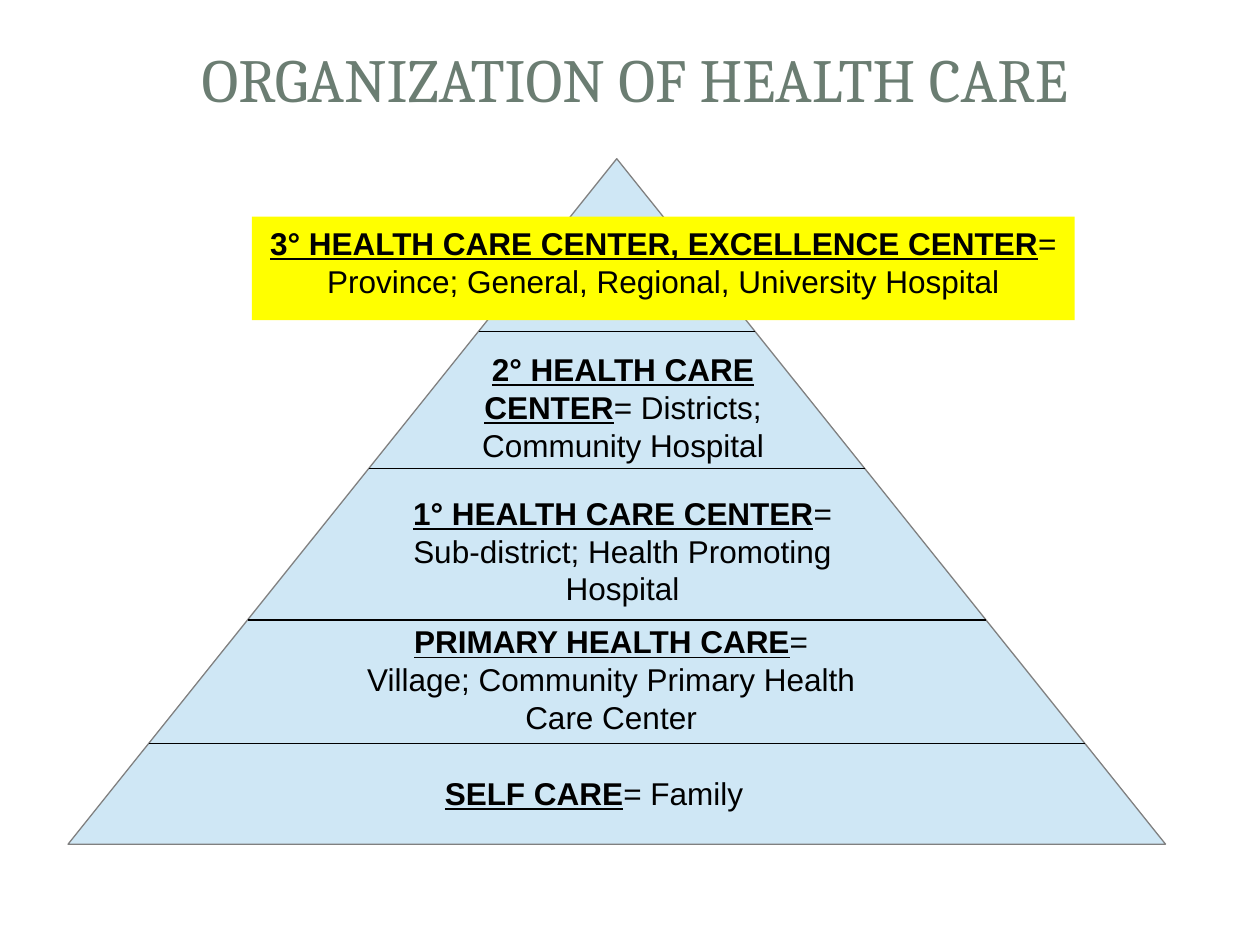
from lxml.etree import SubElement
from pptx import Presentation
from pptx.dml.color import RGBColor
from pptx.enum.shapes import MSO_CONNECTOR, MSO_SHAPE
from pptx.enum.text import MSO_ANCHOR, PP_ALIGN
from pptx.oxml.ns import qn
from pptx.util import Emu, Pt

SCALE = 9144  # EMU per px, 100 px to the inch

TITLE_BOX = (54, 0, 900, 125)
PYRAMID_BOX = (54, 126, 871, 544)
DIVIDER_OFFSETS = (137, 246, 366, 464)

# Label box, relative to the pyramid box; heading; description; fill
LEVELS = [
    ((236, 482, 363, 35), "SELF CARE", "= Family", None),
    ((227, 362, 408, 86), "PRIMARY HEALTH CARE",
     "= Village; Community Primary Health Care Center", None),
    ((254, 260, 372, 86), "1° HEALTH CARE CENTER",
     "= Sub-district; Health Promoting Hospital", None),
    ((277, 146, 327, 81), "2° HEALTH CARE CENTER",
     "= Districts; Community Hospital", None),
    ((146, 46, 653, 82), "3° HEALTH CARE CENTER, EXCELLENCE CENTER",
     "= Province; General, Regional, University Hospital", "FFFF00"),
]


def px(*lengths):
    return [Emu(round(length * SCALE)) for length in lengths]


def color(hex_string):
    return RGBColor.from_string(hex_string)


def set_attributes(target, values):
    for name, value in values.items():
        setattr(target, name, value)


def set_frame(text_frame, anchor, margins):
    left, top, right, bottom = px(*margins)
    set_attributes(text_frame, {
        "word_wrap": True, "vertical_anchor": anchor,
        "margin_left": left, "margin_top": top,
        "margin_right": right, "margin_bottom": bottom,
    })


def add_run(paragraph, text, font_color, **font_values):
    run = paragraph.add_run()
    run.text = text
    set_attributes(run.font, font_values)
    run.font.color.rgb = color(font_color)


def add_title(slide, box):
    title = slide.shapes.title
    set_attributes(title, dict(zip(("left", "top", "width", "height"), px(*box))))
    set_frame(title.text_frame, MSO_ANCHOR.MIDDLE, (10, 4, 10, 5))
    paragraph = title.text_frame.paragraphs[0]
    paragraph.alignment = PP_ALIGN.CENTER
    add_run(paragraph, "ORGANIZATION OF HEALTH CARE", "6B7D72",
            name="Cambria", size=Pt(35))


def add_divider(slide, box, offset):
    """Draw a level line from one sloping side of the pyramid to the other."""
    left, top, width, height = box
    center = left + width / 2
    half = width / 2 * offset / height
    divider = slide.shapes.add_connector(
        MSO_CONNECTOR.STRAIGHT,
        *px(center - half, top + offset, center + half, top + offset))
    divider.line.color.rgb = color("000000")
    divider.line.width = Pt(0.75)
    SubElement(divider._element.spPr, qn("a:effectLst"))


def add_label(slide, box, heading, description, fill):
    if fill:
        label = slide.shapes.add_shape(MSO_SHAPE.RECTANGLE, *px(*box))
        label.shadow.inherit = False
        label.fill.solid()
        label.fill.fore_color.rgb = color(fill)
        label.line.fill.background()
    else:
        label = slide.shapes.add_textbox(*px(*box))
    set_frame(label.text_frame, MSO_ANCHOR.TOP, (9, 6, 9, 4))
    paragraph = label.text_frame.paragraphs[0]
    paragraph.alignment = PP_ALIGN.CENTER
    for text, emphasis in ((heading, True), (description, False)):
        add_run(paragraph, text, "000000", name="Arial", size=Pt(18),
                bold=emphasis, underline=emphasis)


def add_pyramid(slide, box):
    pyramid = slide.shapes.add_shape(MSO_SHAPE.ISOSCELES_TRIANGLE, *px(*box))
    pyramid.shadow.inherit = False
    pyramid.fill.solid()
    pyramid.fill.fore_color.rgb = color("CFE7F5")
    pyramid.line.color.rgb = color("808080")
    pyramid.line.width = Pt(0.75)
    for offset in DIVIDER_OFFSETS:
        add_divider(slide, box, offset)
    for (left, top, width, height), heading, description, fill in LEVELS:
        label_box = (box[0] + left, box[1] + top, width, height)
        add_label(slide, label_box, heading, description, fill)


def main():
    presentation = Presentation()
    presentation.slide_width, presentation.slide_height = px(1000, 750)
    slide = presentation.slides.add_slide(presentation.slide_layouts[5])
    add_title(slide, TITLE_BOX)
    add_pyramid(slide, PYRAMID_BOX)
    presentation.save("out.pptx")


if __name__ == "__main__":
    main()
